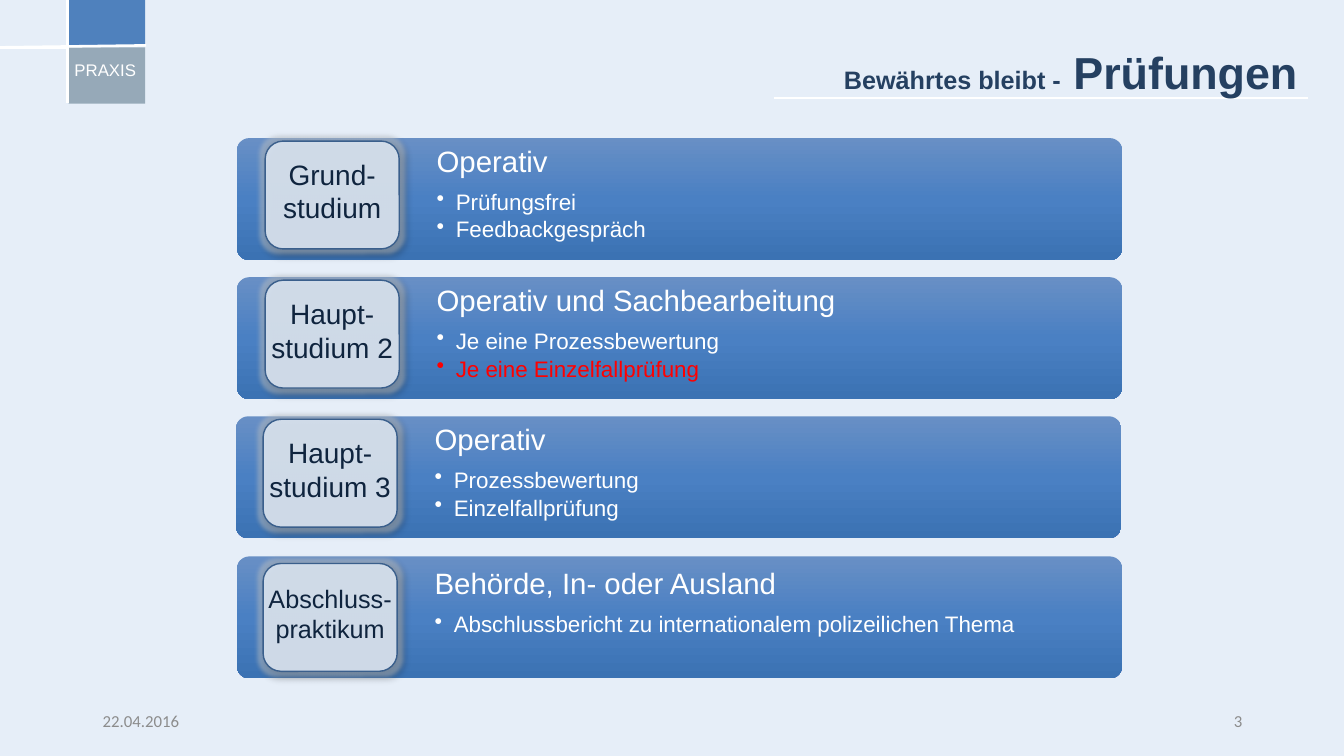
from dataclasses import dataclass

import pptx
import pptx.dml.color
import pptx.enum.shapes
import pptx.enum.text
import pptx.oxml
import pptx.oxml.ns
import pptx.util

Inches = pptx.util.Inches
Pt = pptx.util.Pt
Shapes = pptx.enum.shapes.MSO_SHAPE
Align = pptx.enum.text.PP_ALIGN
Anchor = pptx.enum.text.MSO_ANCHOR
A_NS = pptx.oxml.ns.nsdecls("a")

WHITE, NAVY, GREY = "FFFFFF", "254061", "8C8C8C"
BAR_STOPS = [(0, "688FC5"), (50, "4A80C3"), (100, "3B72B3")]
BAR_WIDTH, BAR_HEIGHT = 8.78, 1.21
BADGE_WIDTH, BADGE_HEIGHT = 1.33, 1.07
LABEL_WIDTH = 1.6


@dataclass
class Item:
    text: str
    color: str = WHITE


@dataclass
class Stage:
    label: list[str]
    heading: str
    items: list[Item]
    bar_left: float
    bar_top: float
    text_left: float
    text_top: float
    label_size: int = 20


@dataclass
class Rule:
    start: tuple[float, float]
    end: tuple[float, float]
    weight: float = 1.8


STAGES = [
    Stage(["Grund-studium"], "Operativ",
          [Item("Prüfungsfrei"), Item("Feedbackgespräch")],
          2.35, 1.37, 4.24, 1.37),
    Stage(["Haupt-studium 2"], "Operativ und Sachbearbeitung",
          [Item("Je eine Prozessbewertung"), Item("Je eine Einzelfallprüfung", "FF0000")],
          2.35, 2.75, 4.24, 2.75),
    Stage(["Haupt-studium 3"], "Operativ",
          [Item("Prozessbewertung"), Item("Einzelfallprüfung")],
          2.34, 4.13, 4.22, 4.13),
    Stage(["Abschluss-", "praktikum"], "Behörde, In- oder Ausland",
          [Item("Abschlussbericht zu internationalem polizeilichen Thema")],
          2.35, 5.52, 4.22, 5.56, 18),
]
RULES = [
    Rule((0.68, 0.47), (0, 0.47)),
    Rule((1.45, 0.45), (0, 0.47)),
    Rule((0.67, 0), (0.67, 1.02)),
    Rule((12.97, 0.97), (7.68, 0.97), 1.75),
]


def rgb(color: str) -> pptx.dml.color.RGBColor:
    return pptx.dml.color.RGBColor.from_string(color)


def add_run(paragraph, text: str, size: float, color: str,
            font: str = "Arial", bold: bool = False) -> None:
    run = paragraph.add_run()
    run.text = text
    run.font.name, run.font.size, run.font.bold = font, Pt(size), bold
    run.font.color.rgb = rgb(color)


def add_frame(slide, left: float, top: float, width: float, height: float,
              anchor=Anchor.TOP, inset_x: float = 0.1, inset_y: float = 0.05):
    box = slide.shapes.add_textbox(Inches(left), Inches(top), Inches(width), Inches(height))
    frame = box.text_frame
    frame.word_wrap = True
    frame.vertical_anchor = anchor
    frame.margin_left = frame.margin_right = Inches(inset_x)
    frame.margin_top = frame.margin_bottom = Inches(inset_y)
    return frame


def add_block(slide, kind, left: float, top: float, width: float, height: float,
              color: str):
    block = slide.shapes.add_shape(kind, Inches(left), Inches(top), Inches(width), Inches(height))
    block.shadow.inherit = False
    block.fill.solid()
    block.fill.fore_color.rgb = rgb(color)
    block.line.fill.background()
    return block


def add_rule(slide, rule: Rule) -> None:
    line = slide.shapes.add_connector(
        pptx.enum.shapes.MSO_CONNECTOR.STRAIGHT,
        *(Inches(value) for value in rule.start + rule.end))
    line.line.color.rgb = rgb(WHITE)
    line.line.width = Pt(rule.weight)
    line._element.spPr.append(pptx.oxml.parse_xml(f"<a:effectLst {A_NS}/>"))


def add_bar(slide, stage: Stage) -> None:
    bar = add_block(slide, Shapes.ROUNDED_RECTANGLE, stage.bar_left, stage.bar_top,
                    BAR_WIDTH, BAR_HEIGHT, BAR_STOPS[0][1])
    bar.adjustments[0] = 0.1
    stops = "".join(f'<a:gs pos="{position * 1000}"><a:srgbClr val="{color}"/></a:gs>'
                    for position, color in BAR_STOPS)
    gradient = pptx.oxml.parse_xml(
        f'<a:gradFill {A_NS} rotWithShape="1"><a:gsLst>{stops}</a:gsLst>'
        '<a:lin ang="5400000" scaled="0"/></a:gradFill>')
    properties = bar._element.spPr
    solid = properties.find(pptx.oxml.ns.qn("a:solidFill"))
    properties.replace(solid, gradient)


def add_badge(slide, stage: Stage) -> None:
    left, top = stage.text_left - 1.61, stage.text_top + 0.03
    badge = add_block(slide, Shapes.ROUNDED_RECTANGLE, left, top,
                      BADGE_WIDTH, BADGE_HEIGHT, "DCE6F2")
    badge.line.color.rgb = rgb("3A5F8C")
    badge.line.width = Pt(1)
    properties = badge._element.spPr
    color = properties.find(pptx.oxml.ns.qn("a:solidFill"))[0]
    color.append(pptx.oxml.parse_xml(f'<a:alpha {A_NS} val="87000"/>'))
    effects = properties.find(pptx.oxml.ns.qn("a:effectLst"))
    effects.append(pptx.oxml.parse_xml(
        f'<a:glow {A_NS} rad="{Pt(6)}"><a:srgbClr val="BFC6CC">'
        '<a:alpha val="50000"/></a:srgbClr></a:glow>'))
    effects.append(pptx.oxml.parse_xml(
        f'<a:outerShdw {A_NS} blurRad="{Pt(4)}" dist="{Pt(3)}" dir="2700000">'
        '<a:srgbClr val="000000"><a:alpha val="40000"/></a:srgbClr></a:outerShdw>'))

    # The label box is wider than the badge and sits slightly above its middle
    frame = add_frame(slide, left - (LABEL_WIDTH - BADGE_WIDTH) / 2, top - 0.04,
                      LABEL_WIDTH, BADGE_HEIGHT, Anchor.MIDDLE)
    for index, part in enumerate(stage.label):
        paragraph = frame.add_paragraph() if index else frame.paragraphs[0]
        paragraph.alignment = Align.CENTER
        add_run(paragraph, part, stage.label_size, "0F243E")


def add_content(slide, stage: Stage) -> None:
    frame = add_frame(slide, stage.text_left, stage.text_top, 6.89, BAR_HEIGHT,
                      inset_x=0.09, inset_y=0.09)
    heading = frame.paragraphs[0]
    heading.line_spacing, heading.space_after = 0.9, Pt(8.4)
    add_run(heading, stage.heading, 21, WHITE)
    for item in stage.items:
        paragraph = frame.add_paragraph()
        paragraph.level = 1
        paragraph.line_spacing, paragraph.space_after = 0.9, Pt(2.7)
        layout = paragraph._p.get_or_add_pPr()
        layout.set("marL", str(Inches(0.19)))
        layout.set("indent", str(Inches(-0.19)))
        layout.append(pptx.oxml.parse_xml(f'<a:buChar {A_NS} char="•"/>'))
        add_run(paragraph, item.text, 16, item.color)


def main() -> None:
    deck = pptx.Presentation()
    deck.slide_width, deck.slide_height = Inches(13.33), Inches(7.5)
    slide = deck.slides.add_slide(deck.slide_layouts[6])
    slide.background.fill.solid()
    slide.background.fill.fore_color.rgb = rgb("E6EEF8")

    # Footer
    date = add_frame(slide, 0.92, 6.95, 3, 0.4, Anchor.MIDDLE).paragraphs[0]
    add_run(date, "22.04.2016", 12, GREY, "Calibri")
    page_number = add_frame(slide, 9.42, 6.95, 3, 0.4, Anchor.MIDDLE).paragraphs[0]
    page_number.alignment = Align.RIGHT
    add_run(page_number, "3", 12, GREY, "Calibri")

    # Corner mark and white rules
    add_block(slide, Shapes.RECTANGLE, 0.68, 0, 0.76, 0.45, "4F81BD")
    add_block(slide, Shapes.RECTANGLE, 0.68, 0.47, 0.76, 0.56, "96A9B8")
    for rule in RULES:
        add_rule(slide, rule)
    section = add_frame(slide, 0.64, 0.54, 0.95, 0.3).paragraphs[0]
    add_run(section, "PRAXIS", 12, WHITE)

    # Title
    title = add_frame(slide, 5.87, 0.32, 7.1, 0.85, Anchor.MIDDLE).paragraphs[0]
    title.alignment, title.line_spacing = Align.RIGHT, 0.9
    add_run(title, "Bewährtes bleibt -", 18, NAVY, bold=True)
    add_run(title, " Prüfungen", 32, NAVY, bold=True)

    # Study stages
    for stage in STAGES:
        add_bar(slide, stage)
        add_content(slide, stage)
        add_badge(slide, stage)

    deck.save("out.pptx")


if __name__ == "__main__":
    main()
